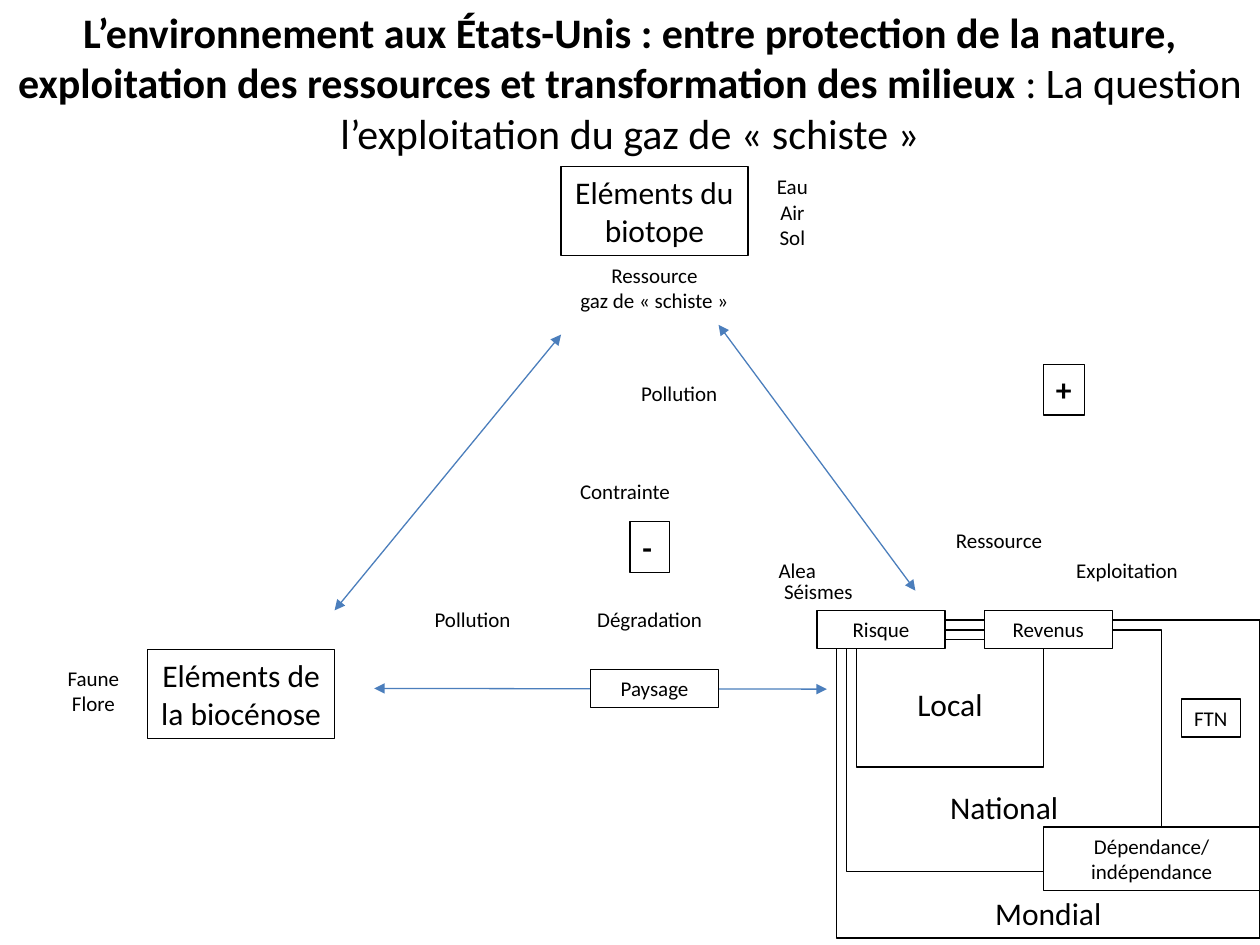
from lxml import etree
from pptx import Presentation
from pptx.dml.color import RGBColor
from pptx.enum.shapes import MSO_CONNECTOR, MSO_SHAPE
from pptx.enum.text import MSO_ANCHOR, PP_ALIGN
from pptx.oxml.ns import qn
from pptx.util import Pt

RECT = MSO_SHAPE.RECTANGLE
STRAIGHT = MSO_CONNECTOR.STRAIGHT
TOP, MIDDLE, BOTTOM = MSO_ANCHOR.TOP, MSO_ANCHOR.MIDDLE, MSO_ANCHOR.BOTTOM
LEFT, CENTER = PP_ALIGN.LEFT, PP_ALIGN.CENTER
BLACK = RGBColor(0, 0, 0)
WHITE = RGBColor(255, 255, 255)
BLUE = RGBColor(0x4B, 0x7E, 0xBC)
FONT = "Calibri"
BIG, SMALL = 18, 12

TITLE = [
    ("L’environnement aux États-Unis : entre protection de la nature, "
     "exploitation des ressources et transformation des milieux", True),
    ("\u00a0: La question l’exploitation du gaz de «\u00a0schiste\u00a0»", False),
]

# Each place is left, top, width, height.
POLES = [
    ("Eléments du biotope", (320.6, 95.3, 106.8, 50.9)),
    ("Eléments de la biocénose", (84.4, 371.2, 106.8, 50.9)),
]
# Text, place, anchor, bottom inset
SCALES = [
    ("Local", (489.4, 365.6, 106.8, 72.7), MIDDLE, 3.6),
    ("National", (483.8, 360, 180, 138), BOTTOM, 26),
    ("Mondial", (478.1, 354.4, 241.9, 181.6), BOTTOM, 3.6),
]
SIGNS = [
    ("+", (596.2, 208.1, 23.6, 29.1)),
    ("-", (360, 298.1, 22.5, 29.1)),
]
TAGS = [
    ("Dépendance/indépendance", (596.2, 472.5, 123.8, 36.3)),
    ("Risque", (466.9, 348.8, 73.1, 21.8)),
    ("Paysage", (337.5, 382.5, 73.1, 21.8)),
    ("Revenus", (562.5, 348.8, 73.1, 21.8)),
    ("FTN", (675, 399.4, 33.8, 21.8)),
]
NOTES = [
    ("Contrainte", (303.8, 270, 106.8, 21.8)),
    ("Ressource\ngaz de «\u00a0schiste\u00a0»", (320.6, 146.2, 106.8, 36.3)),
    ("Alea", (410.6, 315, 90, 22)),
    ("Séismes", (422.6, 327, 90, 22)),
    ("Dégradation", (326.2, 343.1, 90, 22)),
    ("Pollution", (225, 343.1, 90, 22)),
    ("Pollution", (343.1, 213.8, 90, 22)),
    ("Ressource", (517.5, 298.1, 106.8, 21.8)),
    ("Exploitation", (590.6, 315, 106.8, 21.8)),
    ("Eau\nAir\nSol", (427.5, 95.8, 50.6, 50.9)),
    ("Faune\nFlore", (28.1, 376.9, 50.6, 36.3)),
]
# From x, y to x, y
ARROWS = [
    (523.1, 337.5, 410.6, 185.6),
    (472.5, 393.8, 213.8, 393.4),
    (191.2, 348.8, 320.6, 191.2),
]


def style(par, size, bold=None, align=CENTER):
    par.alignment = align
    font = par.font
    font.name, font.size, font.bold = FONT, Pt(size), bold
    font.color.rgb = BLACK


def write(shape, text, size, bold=None, align=CENTER, anchor=TOP):
    frame = shape.text_frame
    frame.word_wrap = True
    frame.vertical_anchor = anchor
    frame.text = text
    for par in frame.paragraphs:
        style(par, size, bold, align)


def add_box(shapes, place, filled=False):
    box = shapes.add_shape(RECT, *map(Pt, place))
    box.shadow.inherit = False
    if filled:
        box.fill.solid()
        box.fill.fore_color.rgb = WHITE
    else:
        box.fill.background()
    box.line.color.rgb = BLACK
    box.line.width = Pt(0.75)
    return box


def add_arrow(shapes, ends):
    line = shapes.add_connector(STRAIGHT, *map(Pt, ends))
    line.line.color.rgb = BLUE
    line.line.width = Pt(0.75)
    props = line.line._get_or_add_ln()
    for end in ("a:headEnd", "a:tailEnd"):
        etree.SubElement(props, qn(end), type="triangle")
    etree.SubElement(line._element.spPr, qn("a:effectLst"))


def main():
    deck = Presentation()
    deck.slide_width, deck.slide_height = Pt(720), Pt(540)
    shapes = deck.slides.add_slide(deck.slide_layouts[6]).shapes

    for ends in ARROWS:
        add_arrow(shapes, ends)
    for text, place in POLES:
        write(add_box(shapes, place), text, BIG)
    for text, place, anchor, inset in SCALES:
        box = add_box(shapes, place)
        write(box, text, BIG, anchor=anchor)
        box.text_frame.margin_bottom = Pt(inset)
    for text, place in SIGNS:
        write(add_box(shapes, place), text, BIG, True, LEFT)
    for text, place in TAGS:
        write(add_box(shapes, place, True), text, SMALL)
    for text, place in NOTES:
        write(shapes.add_textbox(*map(Pt, place)), text, SMALL)

    title = shapes.add_textbox(0, 0, Pt(720), Pt(94.3)).text_frame
    title.word_wrap = True
    par = title.paragraphs[0]
    style(par, 24)
    for text, bold in TITLE:
        run = par.add_run()
        run.text, run.font.bold = text, bold

    deck.save("out.pptx")


if __name__ == "__main__":
    main()
